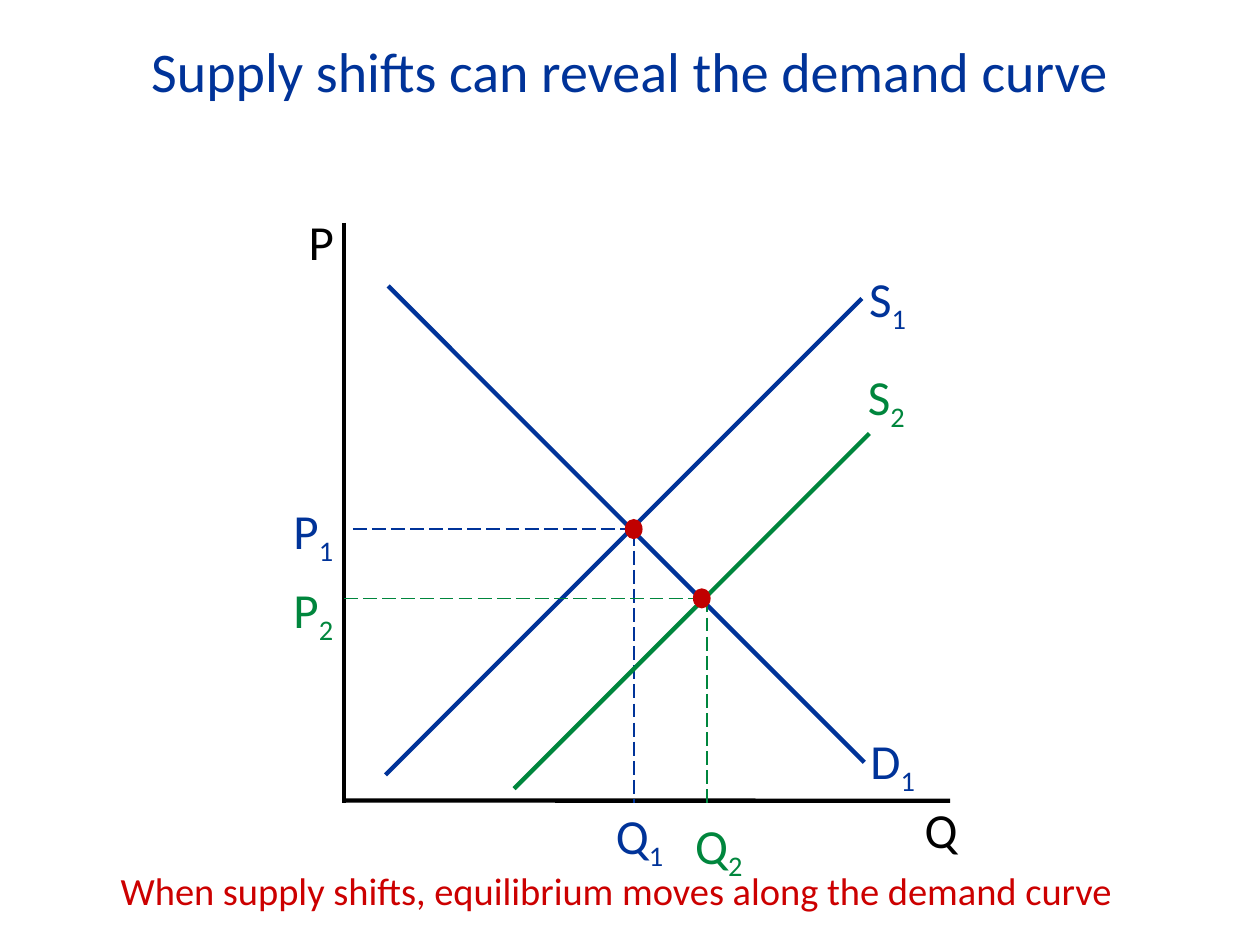
import pptx
import pptx.util
import pptx.dml.color
import pptx.enum.dml
import pptx.enum.shapes
import pptx.enum.text
import pptx.oxml.ns
from lxml import etree

Pt = pptx.util.Pt

COLORS = {
    "first": "003399",
    "second": "00863D",
    "axis": "000000",
    "caption": "CC0000",
    "equilibrium": "C00000",
}
FONT = "Calibri"
SUBSCRIPT = "-25000"
CURVE = {"width": Pt(2.5)}
GUIDE = {"width": Pt(1), "dash_style": pptx.enum.dml.MSO_LINE.LONG_DASH}
FRAME = {"word_wrap": True,
         "auto_size": pptx.enum.text.MSO_AUTO_SIZE.SHAPE_TO_FIT_TEXT}
CENTERED = {"alignment": pptx.enum.text.PP_ALIGN.CENTER}
TIGHT = {"line_spacing": 0.8}

# Straight lines: start x, start y, end x, end y, color, format
LINES = [
    (220.3, 442.8, 492.5, 170.6, "first", CURVE),   # supply 1
    (196.6, 127.4, 196.6, 458.6, "axis", CURVE),    # price axis
    (197.3, 457.4, 542.9, 457.6, "axis", CURVE),    # quantity axis
    (221.8, 163.4, 493.9, 435.6, "first", CURVE),   # demand
    (201.6, 302.4, 360, 302.4, "first", GUIDE),     # price 1
    (362.2, 303.8, 362.2, 458.6, "first", GUIDE),   # quantity 1
    (293.8, 450.7, 496.8, 247.7, "second", CURVE),  # supply 2
    (403.9, 342, 403.9, 460, "second", GUIDE),      # quantity 2
    (196.6, 342, 401.8, 342, "second", GUIDE),      # price 2
]

# Labels: letter, subscript, left, top, width, height, color, paragraph format
LABELS = [
    ("D", "1", 490.3, 414, 41.8, 41, "first", {}),
    ("Q", "", 521.3, 453.6, 36.7, 41, "axis", {}),
    ("P", "", 169.2, 123.8, 32.4, 35.3, "axis", TIGHT),
    ("S", "1", 489.6, 149.8, 41.8, 41, "first", {}),
    ("P", "1", 160.6, 285.8, 41.8, 35.3, "first", TIGHT),
    ("Q", "1", 344.9, 460.1, 54, 35.3, "first", TIGHT),
    ("S", "2", 488.9, 205.9, 41.8, 41, "second", {}),
    ("P", "2", 160.6, 331.2, 41.8, 35.3, "second", TIGHT),
    ("Q", "2", 390.2, 465.8, 54, 35.3, "second", TIGHT),
]

EQUILIBRIA = [(357.1, 296.6), (396, 336.2)]


def rgb(color):
    return pptx.dml.color.RGBColor.from_string(COLORS[color])


def apply(target, values):
    for name, value in values.items():
        setattr(target, name, value)


def add_run(paragraph, wording, size, color):
    run = paragraph.add_run()
    run.text = wording
    apply(run.font, {"name": FONT, "size": Pt(size)})
    run.font.color.rgb = rgb(color)
    return run


def add_text(slide, wording, box, size, color, layout, subscript="", frame=FRAME):
    text_box = slide.shapes.add_textbox(*map(Pt, box))
    apply(text_box.text_frame, frame)
    paragraph = text_box.text_frame.paragraphs[0]
    apply(paragraph, layout)
    add_run(paragraph, wording, size, color)
    if subscript:
        index = add_run(paragraph, subscript, size, color)
        index.font._element.set("baseline", SUBSCRIPT)


def add_line(slide, ends, color, values):
    line = slide.shapes.add_connector(
        pptx.enum.shapes.MSO_CONNECTOR.STRAIGHT, *map(Pt, ends))
    line.line.color.rgb = rgb(color)
    apply(line.line, values)
    # An empty effect list removes the theme shadow
    etree.SubElement(line._element.spPr, pptx.oxml.ns.qn("a:effectLst"))


def add_equilibrium(slide, left, top):
    dot = slide.shapes.add_shape(
        pptx.enum.shapes.MSO_SHAPE.OVAL, Pt(left), Pt(top), Pt(10.1), Pt(11.5))
    dot.shadow.inherit = False
    dot.fill.solid()
    dot.fill.fore_color.rgb = rgb("equilibrium")
    dot.line.fill.background()


def main():
    deck = pptx.Presentation()
    apply(deck, {"slide_width": Pt(720), "slide_height": Pt(540)})
    slide = deck.slides.add_slide(deck.slide_layouts[6])

    # Title
    middle = {"vertical_anchor": pptx.enum.text.MSO_ANCHOR.MIDDLE}
    add_text(slide, "Supply shifts can reveal the demand curve",
             (50.4, 17.3, 619.2, 46.1), 32, "first", CENTERED,
             frame={**FRAME, **middle})

    # Axes, curves and guides
    for *ends, color, values in LINES:
        add_line(slide, ends, color, values)

    # Axis and curve labels
    for letter, subscript, *box, color, layout in LABELS:
        add_text(slide, letter, box, 28, color, layout, subscript)

    # Caption
    add_text(slide, "When supply shifts, equilibrium moves along the demand curve",
             (61.9, 491.8, 619.2, 33.8), 22, "caption", {})

    # Equilibrium points
    for left, top in EQUILIBRIA:
        add_equilibrium(slide, left, top)

    deck.save("out.pptx")


if __name__ == "__main__":
    main()
